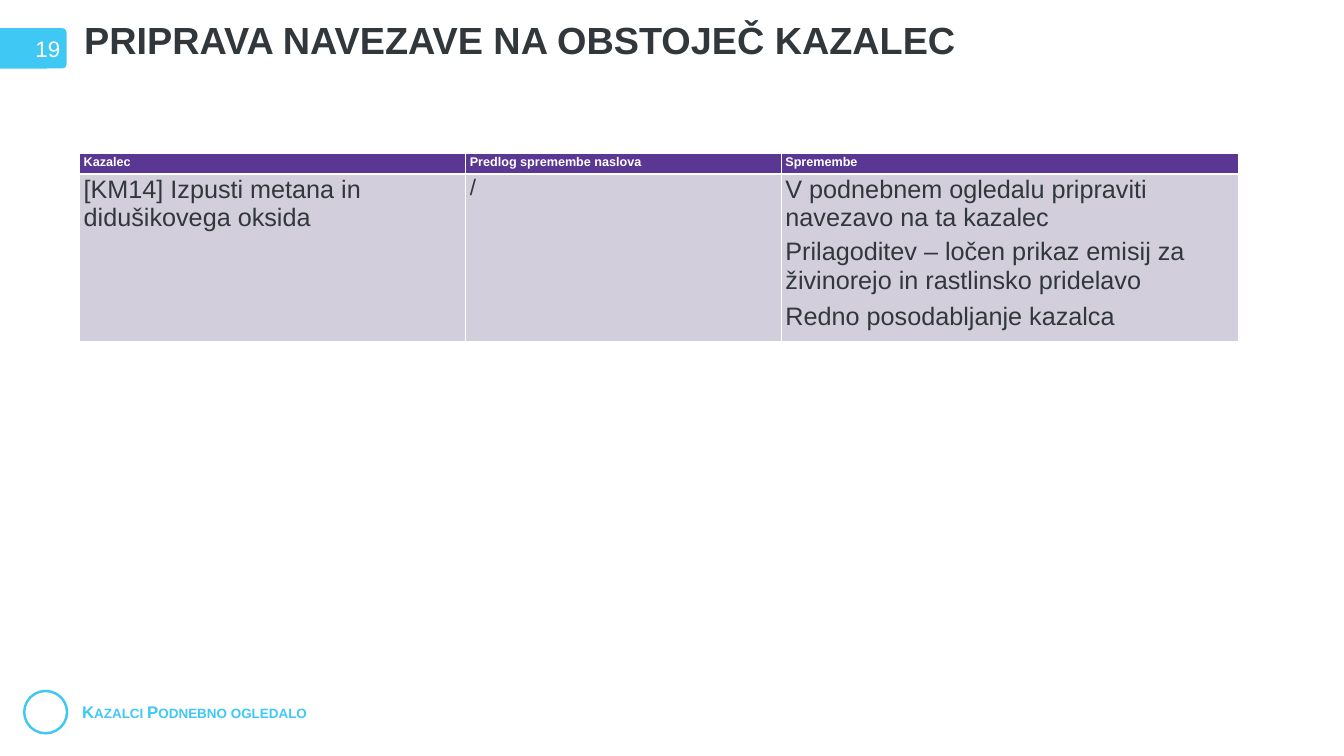
from dataclasses import dataclass

import pptx
import pptx.dml.color
import pptx.enum.shapes
import pptx.enum.text
import pptx.oxml
import pptx.oxml.ns
import pptx.util
from pptx.util import Inches

FONT = "Arial"
COLOURS = {
    "dark": "31373B",
    "accent": "40C8F4",
    "header": "5A3793",
    "body": "D2CEDC",
    "white": "FFFFFF",
}


@dataclass
class TextStyle:
    size: float
    colour: str
    bold: bool = False


@dataclass
class Line:
    text: str
    space_before: float = 0


@dataclass
class CellContent:
    lines: list[Line]
    style: TextStyle
    fill: str
    bottom_border: float = 1


def rgb(name: str) -> pptx.dml.color.RGBColor:
    return pptx.dml.color.RGBColor.from_string(COLOURS[name])


def add_run(paragraph, text: str, style: TextStyle):
    run = paragraph.add_run()
    run.text = text
    run.font.name = FONT
    run.font.size = pptx.util.Pt(style.size)
    run.font.bold = style.bold
    run.font.color.rgb = rgb(style.colour)
    return run


def set_border(cell, side: str, width: float) -> None:
    border = pptx.oxml.parse_xml(
        f'<a:{side} {pptx.oxml.ns.nsdecls("a")} w="{pptx.util.Pt(width)}">'
        f'<a:solidFill><a:srgbClr val="{COLOURS["white"]}"/></a:solidFill></a:{side}>'
    )
    cell._tc.get_or_add_tcPr().append(border)


def fill_cell(cell, content: CellContent) -> None:
    cell.margin_left = cell.margin_right = Inches(0.09)
    cell.margin_top, cell.margin_bottom = Inches(0.03), 0
    # Borders come before the fill in the cell properties
    for side in ("lnL", "lnR", "lnT"):
        set_border(cell, side, 1)
    set_border(cell, "lnB", content.bottom_border)
    cell.fill.solid()
    cell.fill.fore_color.rgb = rgb(content.fill)
    for index, line in enumerate(content.lines):
        frame = cell.text_frame
        paragraph = frame.add_paragraph() if index else frame.paragraphs[0]
        if line.space_before:
            paragraph.space_before = pptx.util.Pt(line.space_before)
        add_run(paragraph, line.text, content.style)


def add_footer(slide) -> None:
    box = slide.shapes.add_textbox(Inches(1.53), Inches(13.88), Inches(5.74), Inches(0.5))
    box.text_frame.word_wrap = True
    run = add_run(box.text_frame.paragraphs[0], "Kazalci Podnebno ogledalo",
                  TextStyle(24, "accent", True))
    run._r.get_or_add_rPr().set("cap", "small")

    circle = slide.shapes.add_shape(
        pptx.enum.shapes.MSO_SHAPE.OVAL,
        Inches(0.48), Inches(13.71), Inches(0.85), Inches(0.84))
    circle.shadow.inherit = False
    circle.fill.background()
    circle.line.color.rgb = rgb("accent")
    circle.line.width = pptx.util.Pt(3.5)


def add_title(slide) -> None:
    title = slide.shapes.title
    title.left, title.top = Inches(1.57), Inches(0.39)
    title.width, title.height = Inches(23.92), Inches(2.9)
    frame = title.text_frame
    frame.word_wrap = True
    frame.auto_size = pptx.enum.text.MSO_AUTO_SIZE.NONE
    frame.vertical_anchor = pptx.enum.text.MSO_ANCHOR.TOP
    paragraph = frame.paragraphs[0]
    paragraph.alignment = pptx.enum.text.PP_ALIGN.LEFT
    paragraph.line_spacing = 0.9
    add_run(paragraph, "PRIPRAVA NAVEZAVE NA OBSTOJEČ KAZALEC",
            TextStyle(54, "dark", True))


def add_page_number(slide) -> None:
    tab = slide.shapes.add_shape(
        pptx.enum.shapes.MSO_SHAPE.ROUNDED_RECTANGLE,
        Inches(-0.51), Inches(0.56), Inches(1.83), Inches(0.8))
    tab.adjustments[0] = 0.108
    tab.shadow.inherit = False
    tab.fill.solid()
    tab.fill.fore_color.rgb = rgb("accent")
    tab.line.fill.background()
    tab.text_frame.vertical_anchor = pptx.enum.text.MSO_ANCHOR.MIDDLE
    paragraph = tab.text_frame.paragraphs[0]
    paragraph.alignment = pptx.enum.text.PP_ALIGN.RIGHT
    add_run(paragraph, "19", TextStyle(32, "white"))


def add_indicator_table(slide) -> None:
    header_style = TextStyle(18, "white", True)
    body_style = TextStyle(36, "dark")
    headings = ["Kazalec", "Predlog spremembe naslova", "Spremembe"]
    changes = [
        Line("V podnebnem ogledalu pripraviti navezavo na ta kazalec"),
        Line("Prilagoditev – ločen prikaz emisij za živinorejo in rastlinsko pridelavo", 9),
        Line("Redno posodabljanje kazalca", 11.5),
    ]
    rows = [
        [CellContent([Line(heading)], header_style, "header", 3) for heading in headings],
        [
            CellContent([Line("[KM14] Izpusti metana in didušikovega oksida")],
                        body_style, "body"),
            CellContent([Line("/")], TextStyle(32, "dark"), "body"),
            CellContent(changes, body_style, "body"),
        ],
    ]
    widths, heights = [7.66, 6.26, 9.07], [0.41, 3.17]
    table = slide.shapes.add_table(
        len(rows), len(widths), Inches(1.57), Inches(3.04),
        Inches(sum(widths)), Inches(sum(heights))).table
    for column, width in zip(table.columns, widths):
        column.width = Inches(width)
    for row, height, contents in zip(table.rows, heights, rows):
        row.height = Inches(height)
        for cell, content in zip(row.cells, contents):
            fill_cell(cell, content)


def main() -> None:
    presentation = pptx.Presentation()
    presentation.slide_width, presentation.slide_height = Inches(26.66), Inches(15)
    slide = presentation.slides.add_slide(presentation.slide_layouts[5])
    add_footer(slide)
    add_title(slide)
    add_page_number(slide)
    add_indicator_table(slide)
    presentation.save("out.pptx")


if __name__ == "__main__":
    main()
